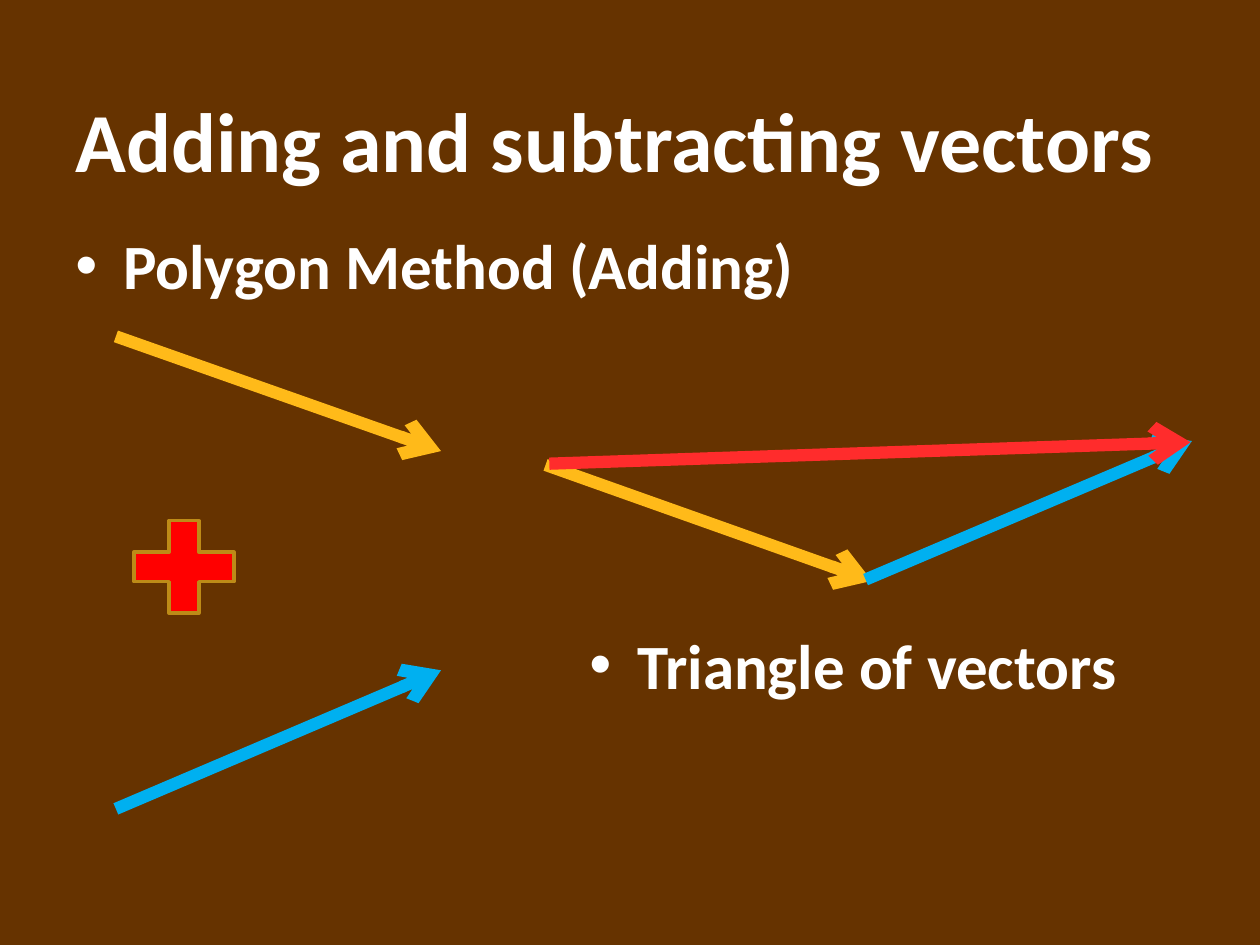
from lxml import etree
from pptx import Presentation
from pptx.dml.color import RGBColor
from pptx.enum.shapes import MSO_CONNECTOR, MSO_SHAPE
from pptx.enum.text import MSO_ANCHOR
from pptx.oxml.ns import qn
from pptx.util import Inches, Pt

BROWN = RGBColor(0x66, 0x33, 0x00)
WHITE = RGBColor(0xFF, 0xFF, 0xFF)
AMBER = RGBColor(0xFF, 0xBA, 0x19)
BLUE = RGBColor(0x00, 0xB0, 0xF0)
CORAL = RGBColor(0xFF, 0x2C, 0x2C)
RED = RGBColor(0xFF, 0x00, 0x00)
GOLD = RGBColor(0xBD, 0x8B, 0x17)


def add_bullet(paragraph):
    """Give a paragraph a white round bullet with a hanging indent."""
    properties = paragraph._p.get_or_add_pPr()
    properties.set("marL", str(Inches(0.38)))
    properties.set("indent", str(-Inches(0.38)))
    color = etree.SubElement(properties, qn("a:buClr"))
    etree.SubElement(color, qn("a:srgbClr"), val=str(WHITE))
    etree.SubElement(properties, qn("a:buFont"), typeface="Arial")
    etree.SubElement(properties, qn("a:buChar"), char="•")


def add_text(slide, box, text, size, anchor=MSO_ANCHOR.TOP, bullet=False):
    frame = slide.shapes.add_textbox(*map(Inches, box)).text_frame
    frame.word_wrap = True
    frame.vertical_anchor = anchor
    paragraph = frame.paragraphs[0]
    paragraph.text = text
    if bullet:
        add_bullet(paragraph)
    font = paragraph.font
    font.name, font.size, font.bold = "Calibri", Pt(size), True
    font.color.rgb = WHITE


def add_vector(slide, start, end, color):
    vector = slide.shapes.add_connector(
        MSO_CONNECTOR.STRAIGHT, *map(Inches, (*start, *end)))
    vector.line.color.rgb = color
    vector.line.width = Pt(7)
    etree.SubElement(vector.line._get_or_add_ln(), qn("a:tailEnd"), type="arrow")
    etree.SubElement(vector._element.spPr, qn("a:effectLst"))


def add_plus(slide, box):
    plus = slide.shapes.add_shape(MSO_SHAPE.MATH_PLUS, *map(Inches, box))
    plus.shadow.inherit = False
    plus.fill.solid()
    plus.fill.fore_color.rgb = RED
    plus.line.color.rgb = GOLD
    plus.line.width = Pt(2)


def add_sum(slide, box):
    """The two separate vectors, one above the other, with a plus between."""
    left, top, width, height = box
    right, bottom = left + width, top + height
    add_vector(slide, (left, bottom), (right, bottom - 1.1), BLUE)
    add_vector(slide, (left, top), (right, top + 0.91), AMBER)
    add_plus(slide, (left, top + 1.33, 1.08, 1))


def add_triangle(slide, box):
    """The vectors placed head to tail, closed by their resultant."""
    left, top, width, height = box
    right, bottom = left + width, top + height
    add_vector(slide, (left, bottom - 0.92), (left + 2.59, bottom), AMBER)
    add_vector(slide, (left + 2.54, bottom - 0.01), (right, top), BLUE)
    add_vector(slide, (left + 0.03, bottom - 0.93), (right - 0.01, top + 0.01), CORAL)


def main():
    presentation = Presentation()
    presentation.slide_width = Inches(10)
    presentation.slide_height = Inches(7.5)
    slide = presentation.slides.add_slide(presentation.slide_layouts[6])
    slide.background.fill.solid()
    slide.background.fill.fore_color.rgb = BROWN

    # Title and method
    add_text(slide, (0.5, 0.3, 9, 1.25), "Adding and subtracting vectors", 48,
             anchor=MSO_ANCHOR.BOTTOM)
    add_text(slide, (0.5, 1.75, 6.17, 0.75), "Polygon Method (Adding)", 36, bullet=True)

    # Vector diagrams
    add_sum(slide, (0.92, 2.67, 2.58, 3.75))
    add_triangle(slide, (4.33, 3.5, 5.13, 1.11))

    # Caption of the triangle
    add_text(slide, (4.58, 4.92, 4.75, 0.75), "Triangle of vectors", 36, bullet=True)

    presentation.save("out.pptx")


if __name__ == "__main__":
    main()
